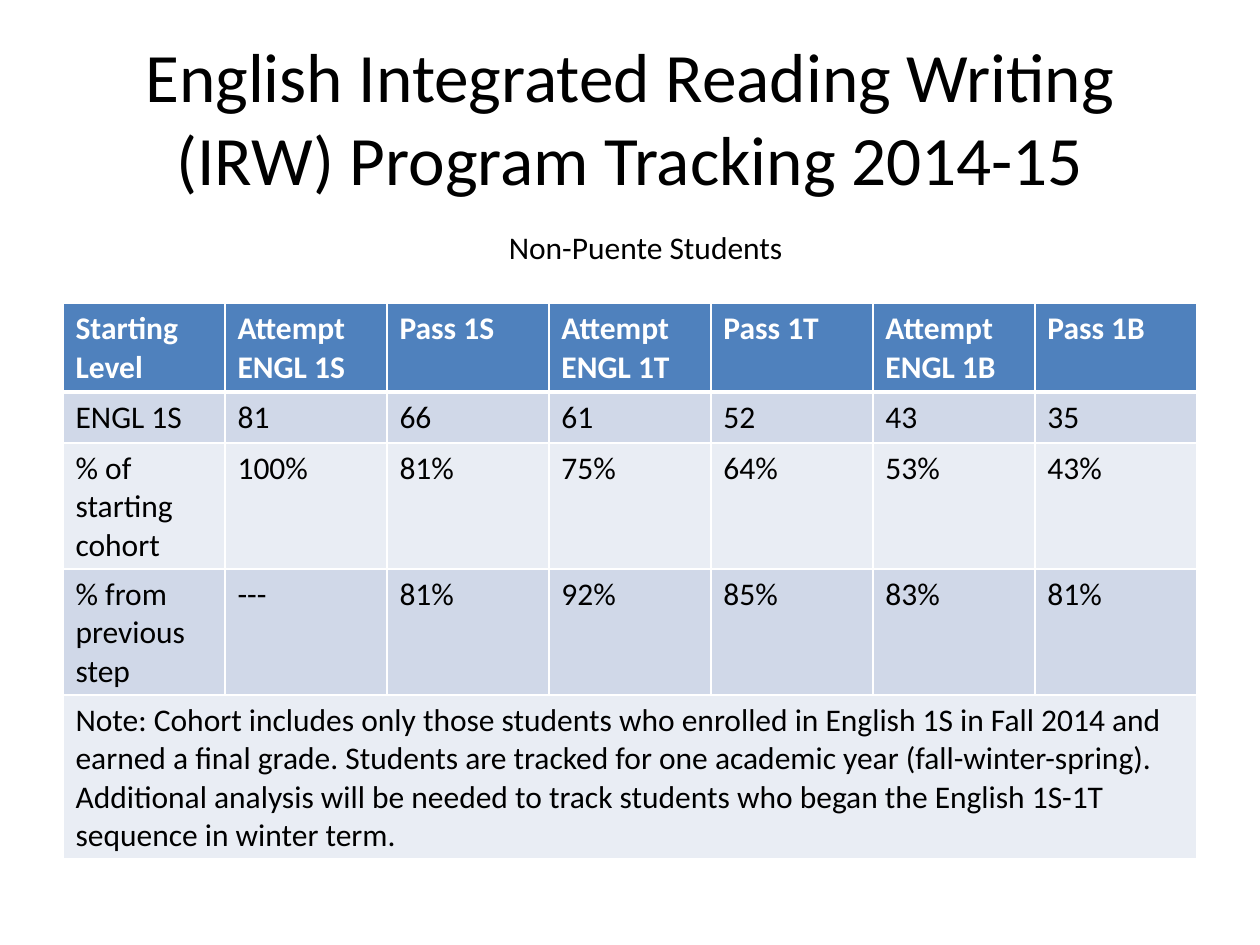
from lxml import etree
from pptx import Presentation
from pptx import util as u
from pptx.dml.color import RGBColor
from pptx.enum import text
from pptx.oxml import ns

FONT = "Calibri"
BLACK, WHITE = "000000", "FFFFFF"
HEADER_FILL = "4F81BD"
BAND_FILLS = ("E9EDF4", "D0D8E8")

TRACKING = (
    ("Starting Level", "Attempt ENGL 1S", "Pass 1S", "Attempt ENGL 1T",
     "Pass 1T", "Attempt ENGL 1B", "Pass 1B"),
    ("ENGL 1S", "81", "66", "61", "52", "43", "35"),
    ("% of starting cohort", "100%", "81%", "75%", "64%", "53%", "43%"),
    ("% from previous step", "---", "81%", "92%", "85%", "83%", "81%"),
)
NOTE = (
    "Note: Cohort includes only those students who enrolled in English 1S in "
    "Fall 2014 and earned a final grade. Students are tracked for one academic "
    "year (fall-winter-spring). Additional analysis will be needed to track "
    "students who began the English 1S-1T sequence in winter term."
)


def rgb(hex_color):
    return RGBColor.from_string(hex_color)


def write(frame, words, size, color=BLACK, bold=False, align=None):
    frame.text = words
    paragraph = frame.paragraphs[0]
    paragraph.alignment = align
    font = paragraph.runs[0].font
    font.name, font.size, font.bold = FONT, u.Pt(size), bold
    font.color.rgb = rgb(color)


def add_heading(slide, words, left, top, width, height, size):
    frame = slide.shapes.add_textbox(
        u.Pt(left), u.Pt(top), u.Pt(width), u.Pt(height)).text_frame
    frame.word_wrap = True
    frame.vertical_anchor = text.MSO_ANCHOR.MIDDLE
    write(frame, words, size, align=text.PP_ALIGN.CENTER)


def set_borders(cell, top, bottom):
    properties = cell._tc.get_or_add_tcPr()
    for side, width in (("L", 1), ("R", 1), ("T", top), ("B", bottom)):
        line = etree.SubElement(properties, ns.qn(f"a:ln{side}"), w=str(u.Pt(width)))
        fill = etree.SubElement(line, ns.qn("a:solidFill"))
        etree.SubElement(fill, ns.qn("a:srgbClr"), val=WHITE)


def style_cell(cell, row):
    set_borders(cell, top=3 if row == 1 else 1, bottom=3 if row == 0 else 1)
    cell.fill.solid()
    cell.fill.fore_color.rgb = rgb(BAND_FILLS[row % 2] if row else HEADER_FILL)


def add_tracking_table(slide, left, top, width, row_height):
    row_count, column_count = len(TRACKING) + 1, len(TRACKING[0])
    table = slide.shapes.add_table(
        row_count, column_count, u.Pt(left), u.Pt(top),
        u.Pt(width), u.Pt(row_height * row_count)).table
    for row in range(row_count):
        for column in range(column_count):
            style_cell(table.cell(row, column), row)
    for row, entries in enumerate(TRACKING):
        for column, entry in enumerate(entries):
            write(table.cell(row, column).text_frame, entry, 18,
                  color=BLACK if row else WHITE, bold=row == 0)
    note_cell = table.cell(row_count - 1, 0)
    note_cell.merge(table.cell(row_count - 1, column_count - 1))
    write(note_cell.text_frame, NOTE, 18)


def main():
    deck = Presentation()
    deck.slide_width, deck.slide_height = u.Pt(720), u.Pt(540)
    slide = deck.slides.add_slide(deck.slide_layouts[6])
    add_heading(slide, "English Integrated Reading Writing (IRW) Program Tracking 2014-15",
                36, 21.6, 648, 90, 39.6)
    add_tracking_table(slide, 36, 173.5, 648, 29.2)
    add_heading(slide, "Non-Puente Students", 228, 126, 282, 30, 18)
    deck.save("out.pptx")


if __name__ == "__main__":
    main()
